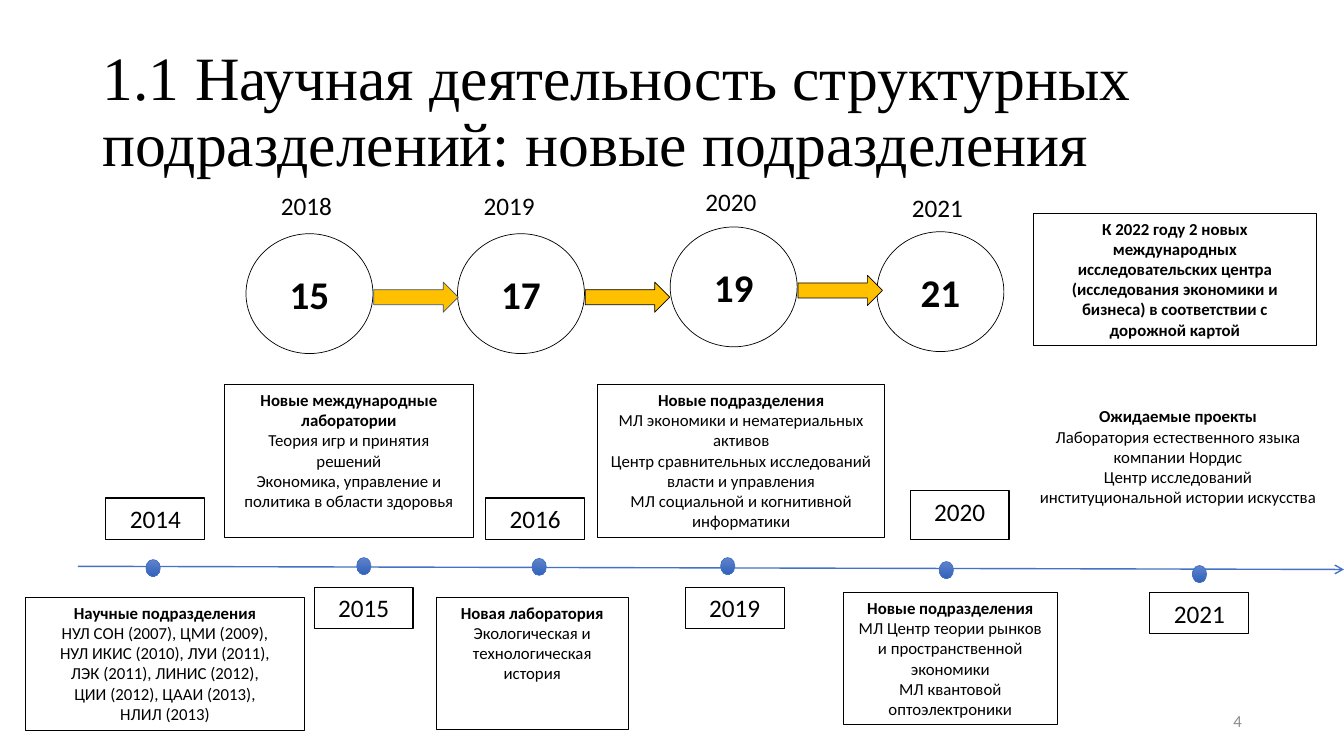
from dataclasses import dataclass

from lxml.etree import SubElement
from pptx import Presentation
from pptx.dml.color import RGBColor
from pptx.enum.shapes import MSO_CONNECTOR, MSO_SHAPE
from pptx.enum.text import MSO_ANCHOR, PP_ALIGN
from pptx.oxml.ns import qn
from pptx.util import Cm, Pt


@dataclass(frozen=True)
class Theme:
    ink: str = "000000"
    muted: str = "8C8C8C"
    axis: str = "4472C4"
    arrow: str = "FFC000"
    arrow_edge: str = "44546A"
    dot_top: str = "6183CB"
    dot_bottom: str = "3062BB"
    title_font: str = "Times New Roman"
    body_font: str = "Calibri"
    title_size: float = 44
    count_size: float = 28
    year_size: float = 18
    body_size: float = 12
    thin: float = 0.5
    border: float = 0.75


THEME = Theme()

# Yearly totals: year, count, circle left and top, label left and top (cm)
TOTALS = [
    ("2018", "15", 6.2, 5.89, 6.83, 4.67),
    ("2019", "17", 11.53, 5.89, 11.94, 4.67),
    ("2020", "19", 16.89, 5.72, 17.53, 4.57),
    ("2021", "21", 22.1, 5.84, 22.73, 4.72),
]

# Timeline: year, box left, top and height, dot left and top (cm)
MILESTONES = [
    ("2014", 2.67, 12.55, 1.04, 3.68, 14.1),
    ("2015", 7.92, 14.81, 1.04, 8.99, 14.05),
    ("2016", 12.24, 12.55, 1.04, 13.41, 14.07),
    ("2019", 17.27, 14.81, 1.04, 18.16, 14.05),
    ("2020", 22.94, 12.37, 1.22, 23.67, 14.15),
    ("2021", 28.98, 14.94, 1.02, 30.05, 14.25),
]

# Cards: left, top, width, height (cm), heading, body paragraphs
CARDS = [
    (0.64, 15.06, 7.04, 3.35, "Научные подразделения",
     ["НУЛ СОН (2007), ЦМИ (2009),", "НУЛ ИКИС (2010), ЛУИ (2011),",
      "ЛЭК (2011), ЛИНИС (2012),", "ЦИИ (2012), ЦААИ (2013),", "НЛИЛ (2013)"]),
    (5.66, 9.7, 6.27, 3.84, "Новые международные лаборатории",
     ["Теория игр и принятия решений",
      "Экономика, управление и политика в области здоровья"]),
    (11, 15.06, 4.83, 3.33, "Новая лаборатория",
     ["Экологическая и", "технологическая история"]),
    (15.06, 9.7, 7.24, 3.84, "Новые подразделения",
     ["МЛ экономики и нематериальных активов",
      "Центр сравнительных исследований власти и управления",
      "МЛ социальной и когнитивной информатики"]),
    (21.26, 14.94, 5.38, 3.33, "Новые подразделения",
     ["МЛ Центр теории рынков и пространственной экономики",
      "МЛ квантовой оптоэлектроники"]),
    (26.04, 5.38, 7.14, 3.33,
     "К 2022 году 2 новых международных исследовательских центра (исследования "
     "экономики и бизнеса) в соответствии с дорожной картой", []),
]
PROJECTS = (25.88, 10.11, 7.62, 2.82, "Ожидаемые проекты",
            ["Лаборатория естественного языка компании Нордис",
             "Центр исследований институциональной истории искусства"])


def color(value):
    return RGBColor.from_string(value)


def write(box, *lines, size=THEME.body_size, font=THEME.body_font, ink=THEME.ink,
          bold=False, bold_first=False, align=PP_ALIGN.CENTER,
          anchor=MSO_ANCHOR.TOP, spacing=None):
    """Fill a shape with one paragraph per line."""
    frame = box.text_frame
    frame.word_wrap = True
    frame.vertical_anchor = anchor
    for index, line in enumerate(lines):
        para = frame.add_paragraph() if index else frame.paragraphs[0]
        para.alignment = align
        para.line_spacing = spacing
        span = para.add_run()
        span.text = line
        span.font.size = Pt(size)
        span.font.name = font
        span.font.bold = bold or (bold_first and index == 0)
        span.font.color.rgb = color(ink)


def add_text(page, left, top, width, height, *lines, **style):
    box = page.shapes.add_textbox(Cm(left), Cm(top), Cm(width), Cm(height))
    write(box, *lines, **style)


def add_figure(page, kind, left, top, width, height, line=THEME.ink,
               weight=THEME.thin, fill=None):
    figure = page.shapes.add_shape(kind, Cm(left), Cm(top), Cm(width), Cm(height))
    figure.shadow.inherit = False
    figure.line.color.rgb = color(line)
    figure.line.width = Pt(weight)
    if fill:
        figure.fill.solid()
        figure.fill.fore_color.rgb = color(fill)
    else:
        figure.fill.background()
    return figure


def add_card(page, left, top, width, height, *lines, **style):
    card = add_figure(page, MSO_SHAPE.RECTANGLE, left, top, width, height,
                      weight=THEME.border)
    write(card, *lines, **style)


def add_dot(page, left, top):
    dot = add_figure(page, MSO_SHAPE.OVAL, left, top, 0.36, 0.43, line=THEME.axis)
    dot.fill.gradient()
    dot.fill.gradient_angle = 270
    for stop, shade in zip(dot.fill.gradient_stops, (THEME.dot_top, THEME.dot_bottom)):
        stop.color.rgb = color(shade)


def add_axis(page, left, top, right, bottom):
    axis = page.shapes.add_connector(MSO_CONNECTOR.STRAIGHT, Cm(left), Cm(top),
                                     Cm(right), Cm(bottom))
    axis.line.color.rgb = color(THEME.axis)
    axis.line.width = Pt(1)
    SubElement(axis.line._get_or_add_ln(), qn("a:tailEnd"), type="arrow")
    SubElement(axis._element.spPr, qn("a:effectLst"))


def add_totals(page):
    for index, (year, count, left, top, label_left, label_top) in enumerate(TOTALS):
        circle = add_figure(page, MSO_SHAPE.OVAL, left, top, 3.2, 3.02)
        write(circle, count, size=THEME.count_size, bold=True, anchor=MSO_ANCHOR.MIDDLE)
        add_text(page, label_left, label_top, 1.96, 1.04, year,
                 size=THEME.year_size, align=PP_ALIGN.LEFT)
        if index:
            # Arrow from the previous circle
            start_left, start_top = TOTALS[index - 1][2:4]
            add_figure(page, MSO_SHAPE.RIGHT_ARROW, start_left + 3.22, start_top + 1.22,
                       2.13, 0.76, fill=THEME.arrow,
                       line=THEME.arrow_edge if index == 1 else THEME.ink)


def add_timeline(page):
    add_axis(page, 1.96, 14.27, 33.87, 14.35)
    for year, left, top, height, dot_left, dot_top in MILESTONES:
        add_dot(page, dot_left, dot_top)
        add_card(page, left, top, 2.49, height, year, size=THEME.year_size)


def main():
    deck = Presentation()
    deck.slide_width, deck.slide_height = Cm(33.87), Cm(19.05)
    page = deck.slides.add_slide(deck.slide_layouts[6])

    # Title
    add_text(page, 2.34, 1.02, 29.21, 3.68,
             "1.1 Научная деятельность структурных подразделений: новые подразделения",
             size=THEME.title_size, font=THEME.title_font, align=PP_ALIGN.LEFT,
             anchor=MSO_ANCHOR.MIDDLE, spacing=0.9)

    # Diagrams
    add_totals(page)
    add_timeline(page)

    # Descriptions
    for *place, heading, body in CARDS:
        add_card(page, *place, heading, *body, bold_first=True)
    *place, heading, body = PROJECTS
    add_text(page, *place, heading, *body, bold_first=True)

    # Page number
    add_text(page, 23.93, 17.65, 7.62, 1.02, "4", ink=THEME.muted,
             align=PP_ALIGN.RIGHT, anchor=MSO_ANCHOR.MIDDLE)

    deck.save("out.pptx")


if __name__ == "__main__":
    main()
